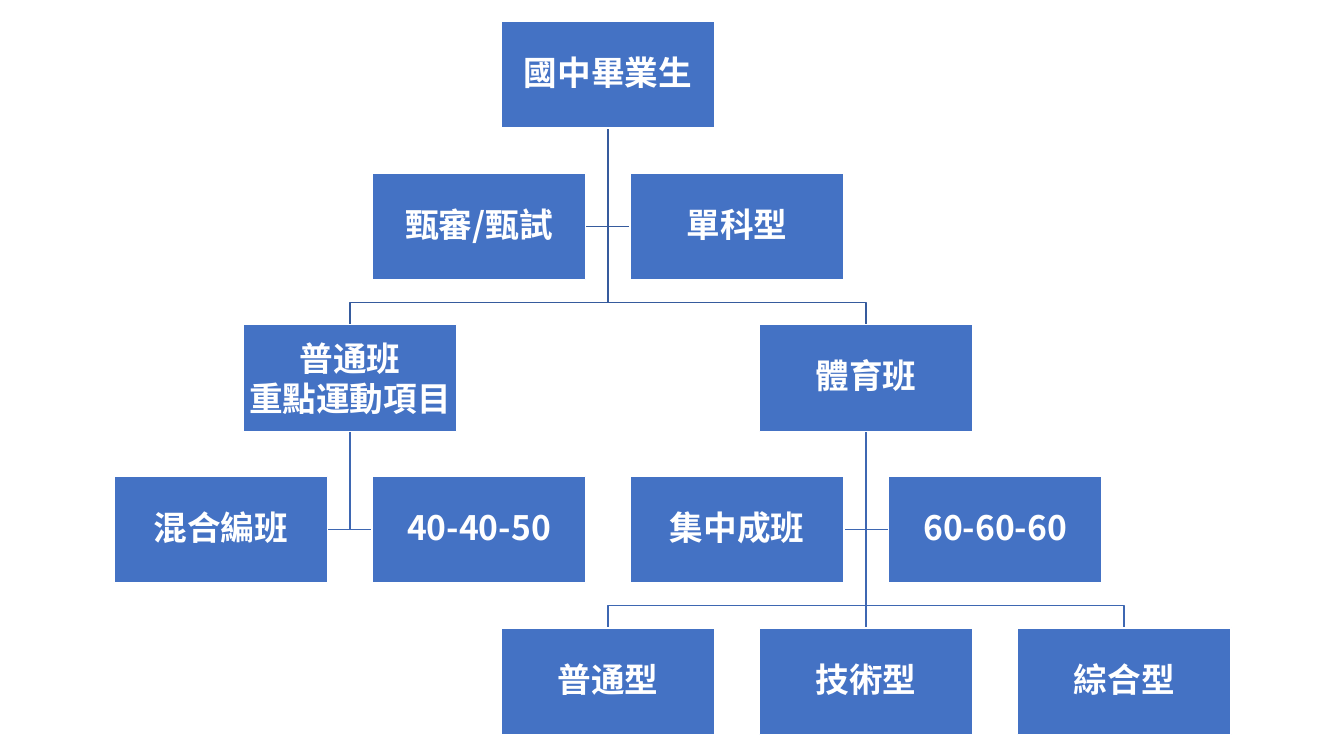
from pptx import Presentation
from pptx.dml.color import RGBColor
from pptx.enum.shapes import MSO_CONNECTOR, MSO_SHAPE
from pptx.enum.text import MSO_ANCHOR, PP_ALIGN
from pptx.oxml.ns import qn
from pptx.util import Inches, Pt

RECTANGLE = MSO_SHAPE.RECTANGLE
STRAIGHT = MSO_CONNECTOR.STRAIGHT
MIDDLE = MSO_ANCHOR.MIDDLE
CENTER = PP_ALIGN.CENTER

BLUE = RGBColor(0x44, 0x72, 0xC4)
WHITE = RGBColor(0xFF, 0xFF, 0xFF)
UPPER_LINE = RGBColor(0x36, 0x5B, 0x9D)
LOWER_LINE = RGBColor(0x3E, 0x67, 0xB2)

FONT = "Noto Sans CJK TC"
BOX_WIDTH, BOX_HEIGHT = 2.12, 1.06
FIRST_CENTER, COLUMN_STEP = 2.19, 1.28
FIRST_TOP, ROW_STEP = 0.21, 6.02 / 4
BRANCH_DROP = 0.22
INSET = 0.02

BOXES = [
    (3, 0, "國中畢業生"),
    (2, 1, "甄審/甄試"),
    (4, 1, "單科型"),
    (1, 2, "普通班\n重點運動項目"),
    (5, 2, "體育班"),
    (0, 3, "混合編班"),
    (2, 3, "40-40-50"),
    (4, 3, "集中成班"),
    (6, 3, "60-60-60"),
    (3, 4, "普通型"),
    (5, 4, "技術型"),
    (7, 4, "綜合型"),
]
FAMILIES = [
    (3, 0, (1, 5), UPPER_LINE),
    (1, 2, (), LOWER_LINE),
    (5, 2, (3, 5, 7), LOWER_LINE),
]


def center_x(column):
    return FIRST_CENTER + COLUMN_STEP * column


def top_y(row):
    return FIRST_TOP + ROW_STEP * row


def style_line(line, color):
    line.color.rgb = color
    line.width = Pt(1)


def add_route(slide, points, color):
    corners = [(Inches(x), Inches(y)) for x, y in points]
    start, *rest = corners
    if len(rest) == 1:
        route = slide.shapes.add_connector(STRAIGHT, *start, *rest[0])
        properties = route._element.spPr
        style_line(route.line, color)
        properties.append(properties.makeelement(qn("a:effectLst"), {}))
        return
    builder = slide.shapes.build_freeform(*start)
    builder.add_line_segments(rest, close=False)
    route = builder.convert_to_shape()
    route.shadow.inherit = False
    route.fill.background()
    style_line(route.line, color)


def add_family(slide, column, row, children, color):
    x = center_x(column)
    bottom = top_y(row) + BOX_HEIGHT
    assistant_y = top_y(row + 1) + BOX_HEIGHT / 2
    reach = COLUMN_STEP - BOX_WIDTH / 2
    for side in (reach, -reach):
        add_route(slide, [(x, bottom), (x, assistant_y), (x + side, assistant_y)], color)
    child_top = top_y(row + 2)
    branch_y = child_top - BRANCH_DROP
    for child in children:
        child_x = center_x(child)
        bends = [] if child == column else [(x, branch_y), (child_x, branch_y)]
        add_route(slide, [(x, bottom), *bends, (child_x, child_top)], color)


def format_paragraph(paragraph, line_spacing):
    paragraph.alignment = CENTER
    paragraph.line_spacing = line_spacing
    font = paragraph.font
    font.name = FONT
    font.size = Pt(24)
    font.bold = True
    font.color.rgb = WHITE
    defaults = paragraph._p.pPr.find(qn("a:defRPr"))
    defaults.append(defaults.makeelement(qn("a:ea"), {"typeface": FONT}))


def add_box(slide, column, row, label):
    box = slide.shapes.add_shape(
        RECTANGLE,
        Inches(center_x(column) - BOX_WIDTH / 2), Inches(top_y(row)),
        Inches(BOX_WIDTH), Inches(BOX_HEIGHT),
    )
    box.shadow.inherit = False
    box.fill.solid()
    box.fill.fore_color.rgb = BLUE
    style_line(box.line, WHITE)
    frame = box.text_frame
    frame.word_wrap = True
    frame.vertical_anchor = MIDDLE
    frame.margin_left = frame.margin_right = Inches(INSET)
    frame.margin_top = frame.margin_bottom = Inches(INSET)
    frame.text = label
    line_spacing = 1.0 if len(frame.paragraphs) > 1 else 0.9
    for paragraph in frame.paragraphs:
        format_paragraph(paragraph, line_spacing)


def main():
    presentation = Presentation()
    presentation.slide_width = Inches(13.33)
    presentation.slide_height = Inches(7.5)
    slide = presentation.slides.add_slide(presentation.slide_layouts[6])
    for family in FAMILIES:
        add_family(slide, *family)
    for box in BOXES:
        add_box(slide, *box)
    presentation.save("out.pptx")


main()
